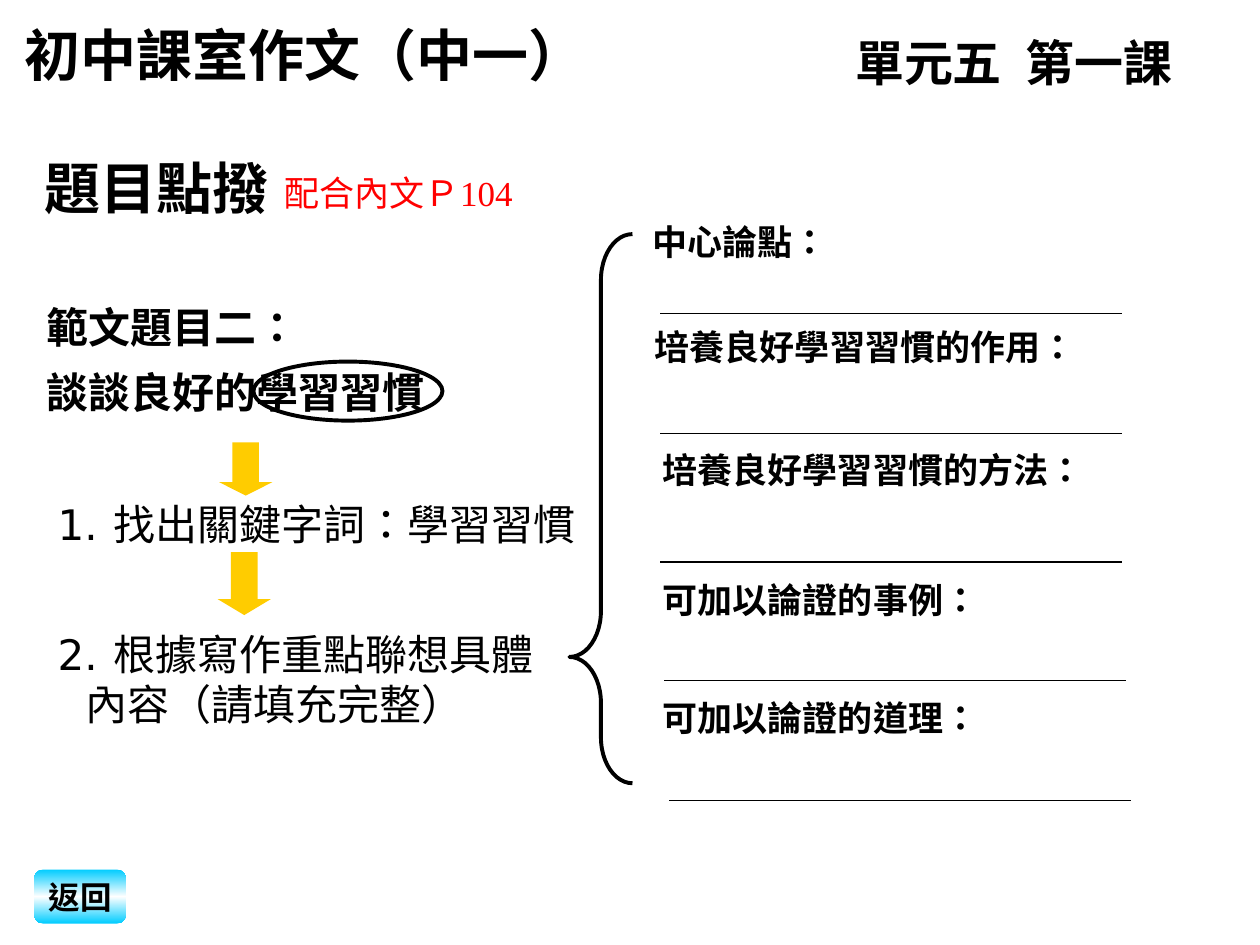
from copy import deepcopy

from lxml import etree
from pptx import Presentation
from pptx.dml.color import RGBColor
from pptx.enum.shapes import MSO_CONNECTOR, MSO_SHAPE
from pptx.enum.text import MSO_ANCHOR, MSO_AUTO_SIZE, PP_ALIGN
from pptx.oxml.ns import qn
from pptx.util import Cm, Pt

LEFT, CENTER = PP_ALIGN.LEFT, PP_ALIGN.CENTER
TOP, MIDDLE = MSO_ANCHOR.TOP, MSO_ANCHOR.MIDDLE
NO_FIT = MSO_AUTO_SIZE.NONE
STRAIGHT = MSO_CONNECTOR.STRAIGHT
SERIF, SANS = "Times New Roman", "DejaVu Sans"
COLORS = {key: RGBColor.from_string(value) for key, value in {
    "ink": "000000", "note": "FF0000", "arrow": "FFCC00",
    "button": "00CCFF", "shine": "FFFFFF"}.items()}


def write(shape, text, size, font, bold=True, color="ink", anchor=TOP):
    """Fill a shape with left-aligned Chinese text, one paragraph per line."""
    frame = shape.text_frame
    frame.text = text
    frame.word_wrap = True
    frame.auto_size = NO_FIT
    frame.vertical_anchor = anchor
    chinese_font = SANS if font == SERIF else font
    for para in frame.paragraphs:
        para.alignment = LEFT
        para.space_before = Pt(0)
        for span in para.runs:
            span.font.size = Pt(size)
            span.font.bold = bold
            span.font.name = font
            span.font.color.rgb = COLORS[color]
            props = span.font._element
            props.set("lang", "zh-TW")
            etree.SubElement(props, qn("a:ea"), typeface=chinese_font)
    return frame.paragraphs


def add_plain_shape(kind, left, top, width, height):
    shape = page.shapes.add_shape(kind, Cm(left), Cm(top), Cm(width), Cm(height))
    shape.shadow.inherit = False
    shape.fill.background()
    shape.line.fill.background()
    return shape


deck = Presentation()
deck.slide_width, deck.slide_height = Cm(25.4), Cm(19.05)
page = deck.slides.add_slide(deck.slide_layouts[1])

# Title and the two steps
title, steps = page.placeholders
title.left, title.top, title.width, title.height = Cm(0.23), Cm(0.28), Cm(13.26), Cm(1.6)
write(title, "初中課室作文（中一）", 32, "Roboto")

steps.left, steps.top, steps.width, steps.height = Cm(0.91), Cm(9.93), Cm(11.2), Cm(4.9)
step_paras = write(
    steps, "找出關鍵字詞：學習習慣\n根據寫作重點聯想具體\n內容（請填充完整）",
    24, SERIF, bold=False)
step_paras[1].space_before = Pt(45)
for number, para in enumerate(step_paras, 1):
    props = para._p.get_or_add_pPr()
    if number < 3:
        props.set("marL", str(Cm(1.12)))
        props.set("indent", str(-Cm(1.12)))
        etree.SubElement(props, qn("a:buFont"), typeface=SERIF)
        etree.SubElement(props, qn("a:buAutoNum"), type="arabicPeriod",
                         startAt=str(number))
    else:
        props.set("marL", str(Cm(0.56)))
        props.set("indent", "0")
        etree.SubElement(props, qn("a:buNone"))

# Headings
headings = [
    ("題目點撥", 0.64, 2.97, 7.82, 1.6, 32, "Arial", True, "ink"),
    ("單元五\t第一課", 16.99, 0.53, 8.4, 1.45, 28, "Roboto", True, "ink"),
    ("配合內文Ｐ104", 5.49, 3.33, 6.27, 1.09, 20, SERIF, False, "note"),
    ("範文題目二：\n談談良好的學習習慣", 0.69, 5.64, 12.7, 2.9, 24, SANS, True, "ink"),
]
for text, left, top, width, height, size, font, bold, color in headings:
    box = page.shapes.add_textbox(Cm(left), Cm(top), Cm(width), Cm(height))
    paras = write(box, text, size, font, bold, color)
    if "\t" in text:
        tabs = etree.SubElement(paras[0]._p.get_or_add_pPr(), qn("a:tabLst"))
        etree.SubElement(tabs, qn("a:tab"), pos=str(Cm(3.43)), algn="l")
    if len(paras) > 1:
        for para in paras:
            para.line_spacing = 1.3

# Keyword ring and brace
ring = add_plain_shape(MSO_SHAPE.OVAL, 5.11, 7.29, 3.81, 1.19)
brace = add_plain_shape(MSO_SHAPE.LEFT_BRACE, 11.48, 4.72, 1.27, 11.07)
brace.adjustments[0], brace.adjustments[1] = 0.73, 0.77
for outline in (ring, brace):
    outline.line.color.rgb = COLORS["ink"]
    outline.line.width = Pt(2.25)

# Arrows between the steps
for left, top, height, head in [(4.42, 8.92, 1.07, 0.25), (4.39, 11.13, 1.27, 0.3)]:
    arrow = add_plain_shape(MSO_SHAPE.DOWN_ARROW, left, top, 1.07, height)
    arrow.adjustments[0], arrow.adjustments[1] = 0.5, head
    arrow.fill.solid()
    arrow.fill.fore_color.rgb = COLORS["arrow"]

# Prompts, each with a line to write on
prompts = [
    ("中心論點：", 12.9, 4.32, 13.31, 6.32),
    ("培養良好學習習慣的作用：", 12.95, 6.43, 13.31, 8.74),
    ("培養良好學習習慣的方法：", 13.11, 8.92, 13.31, 11.33),
    ("可加以論證的事例：", 13.11, 11.53, 13.39, 13.72),
    ("可加以論證的道理：", 13.11, 13.92, 13.49, 16.13),
]
for text, left, top, line_left, line_top in prompts:
    box = page.shapes.add_textbox(Cm(left), Cm(top), Cm(9.73), Cm(1.09))
    write(box, text, 20, SANS)
    rule = page.shapes.add_connector(
        STRAIGHT, Cm(line_left), Cm(line_top), Cm(line_left + 9.3), Cm(line_top))
    rule.line.color.rgb = COLORS["ink"]
    rule.line.width = Pt(0.75)
    etree.SubElement(rule._element.spPr, qn("a:effectLst"))

# Return button, its label centred on one line
button = add_plain_shape(MSO_SHAPE.FLOWCHART_ALTERNATE_PROCESS, 0.69, 17.53, 1.85, 1.09)
button.fill.gradient()
button.fill.gradient_angle = 90
stop_list = button._element.spPr.find(qn("a:gradFill")).find(qn("a:gsLst"))
stop_list.append(deepcopy(stop_list[0]))
for stop, position, color in zip(button.fill.gradient_stops, (0, 0.5, 1),
                                 ("button", "shine", "button")):
    stop.position = position
    stop.color.rgb = COLORS[color]
label = write(button, "返回", 18, "Arial", anchor=MIDDLE)[0]
label.alignment = CENTER
frame = button.text_frame
frame.word_wrap = False
frame.margin_left = frame.margin_right = frame.margin_top = frame.margin_bottom = Cm(0)

deck.save("out.pptx")
